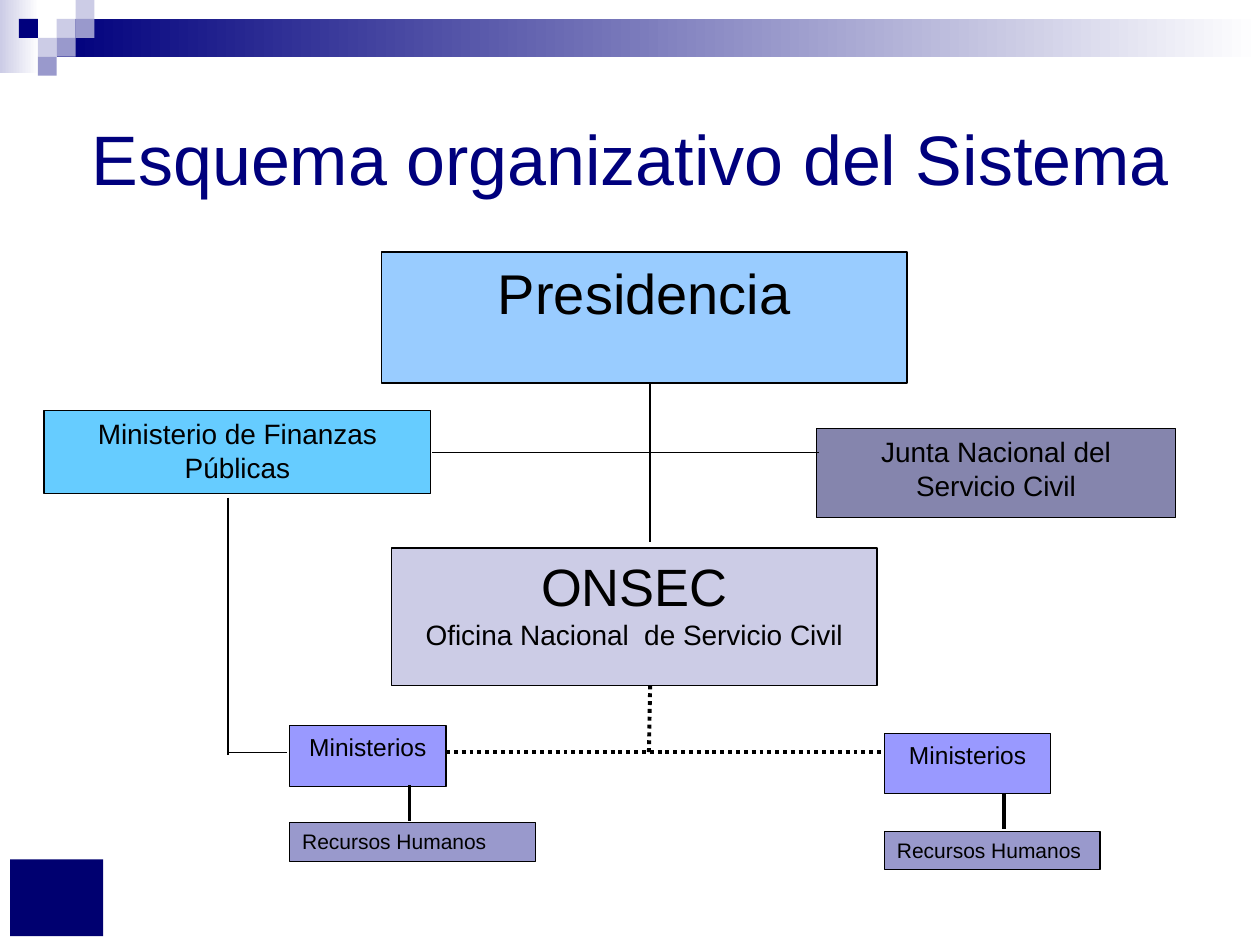
"""Build an organisation chart slide for the civil service system."""
import pptx
import pptx.dml.color
import pptx.enum.dml
import pptx.enum.shapes
import pptx.enum.text
import pptx.oxml
import pptx.util

Inches = pptx.util.Inches
Pt = pptx.util.Pt
RGBColor = pptx.dml.color.RGBColor
ALIGN = pptx.enum.text.PP_ALIGN
ANCHOR = pptx.enum.text.MSO_ANCHOR
RECTANGLE = pptx.enum.shapes.MSO_SHAPE.RECTANGLE
STRAIGHT = pptx.enum.shapes.MSO_CONNECTOR.STRAIGHT
DOTTED = pptx.enum.dml.MSO_LINE.ROUND_DOT

BLACK = RGBColor(0x00, 0x00, 0x00)
WHITE = RGBColor(0xFF, 0xFF, 0xFF)
NAVY = RGBColor(0x00, 0x00, 0x7D)
DARK_NAVY = RGBColor(0x00, 0x00, 0x70)
LAVENDER = RGBColor(0xCC, 0xCC, 0xE6)
MAUVE = RGBColor(0x99, 0x99, 0xCC)
SLATE = RGBColor(0x85, 0x85, 0xAD)
VIOLET = RGBColor(0x99, 0x99, 0xFF)
SKY = RGBColor(0x99, 0xCC, 0xFF)
CYAN = RGBColor(0x66, 0xCC, 0xFF)

deck = pptx.Presentation()
deck.slide_width, deck.slide_height = Inches(10), Inches(7.5)
page = deck.slides.add_slide(deck.slide_layouts[5])


def add_box(left, top, width, height, color):
    box = page.shapes.add_shape(
        RECTANGLE, Inches(left), Inches(top), Inches(width), Inches(height))
    box.shadow.inherit = False
    box.fill.solid()
    box.fill.fore_color.rgb = color
    box.line.fill.background()
    return box


def write_line(para, text, size, color, align):
    para.alignment = align
    span = para.add_run()
    span.text = text
    for name, value in {"name": "Arial", "size": Pt(size)}.items():
        setattr(span.font, name, value)
    span.font.color.rgb = color


for left, top, width, height, color in [
    (0, 0, 0.31, 0.58, LAVENDER),
    (0.45, 0.15, 9.55, 0.3, NAVY),
]:
    band = add_box(left, top, width, height, color)
    band.fill.gradient()
    band.fill.gradient_angle = 0
    for stop, shade in zip(band.fill.gradient_stops, (color, WHITE)):
        stop.color.rgb = shade

tile = 0.15
for column, row, color in [
    (3, 1, LAVENDER), (4, 0, LAVENDER), (4, 1, MAUVE), (2, 2, LAVENDER),
    (1, 1, NAVY), (3, 2, MAUVE), (2, 3, MAUVE),
]:
    add_box(column * tile, row * tile, tile, tile, color)

add_box(0.08, 6.82, 0.74, 0.61, DARK_NAVY)

title = page.shapes.title
for name, value in {"left": 0.5, "top": 0.5, "width": 9, "height": 1.5}.items():
    setattr(title, name, Inches(value))
title.text_frame.vertical_anchor = ANCHOR.MIDDLE
write_line(title.text_frame.paragraphs[0], "Esquema organizativo del Sistema",
           40, NAVY, ALIGN.CENTER)

ministry = [("Ministerios", 14)]
staff = [("Recursos Humanos", 12)]
for left, top, width, height, color, align, lines in [
    (3.03, 2, 4.17, 1.04, SKY, ALIGN.CENTER, [("Presidencia", 32)]),
    (3.11, 4.35, 3.85, 1.09, LAVENDER, ALIGN.CENTER,
     [("ONSEC", 30), ("Oficina Nacional  de Servicio Civil", 16)]),
    (6.48, 3.4, 2.85, 0.71, SLATE, ALIGN.CENTER,
     [("Junta Nacional del Servicio Civil", 16)]),
    (0.35, 3.26, 3.07, 0.66, CYAN, ALIGN.CENTER,
     [("Ministerio de Finanzas Públicas", 16)]),
    (2.3, 5.76, 1.24, 0.48, VIOLET, ALIGN.CENTER, ministry),
    (7.02, 5.82, 1.32, 0.48, VIOLET, ALIGN.CENTER, ministry),
    (2.3, 6.53, 1.95, 0.31, MAUVE, ALIGN.LEFT, staff),
    (7.02, 6.6, 1.71, 0.3, MAUVE, ALIGN.LEFT, staff),
]:
    box = add_box(left, top, width, height, color)
    box.line.color.rgb = BLACK
    box.line.width = Pt(0.75)
    frame = box.text_frame
    frame.word_wrap = True
    frame.vertical_anchor = ANCHOR.TOP
    for index, (text, size) in enumerate(lines):
        para = frame.add_paragraph() if index else frame.paragraphs[0]
        write_line(para, text, size, BLACK, align)

for start_x, start_y, end_x, end_y, weight, dash in [
    (5.16, 3.04, 5.16, 4.3, 0.75, None),
    (3.43, 3.59, 6.5, 3.59, 0.75, None),
    (1.81, 3.95, 1.81, 5.99, 0.75, None),
    (1.81, 5.97, 2.28, 5.97, 0.75, None),
    (3.25, 6.23, 3.25, 6.52, 2.25, None),
    (7.97, 6.3, 7.97, 6.58, 2.25, None),
    (5.16, 5.44, 5.15, 5.97, 2.25, DOTTED),
    (3.54, 5.97, 7, 5.97, 2.25, DOTTED),
]:
    link = page.shapes.add_connector(
        STRAIGHT, Inches(start_x), Inches(start_y), Inches(end_x), Inches(end_y))
    link.line.color.rgb = BLACK
    link.line.width = Pt(weight)
    link.line.dash_style = dash
    link._element.spPr.append(pptx.oxml.parse_xml(
        '<a:effectLst xmlns:a="http://schemas.openxmlformats.org/drawingml/2006/main"/>'))

deck.save("out.pptx")
